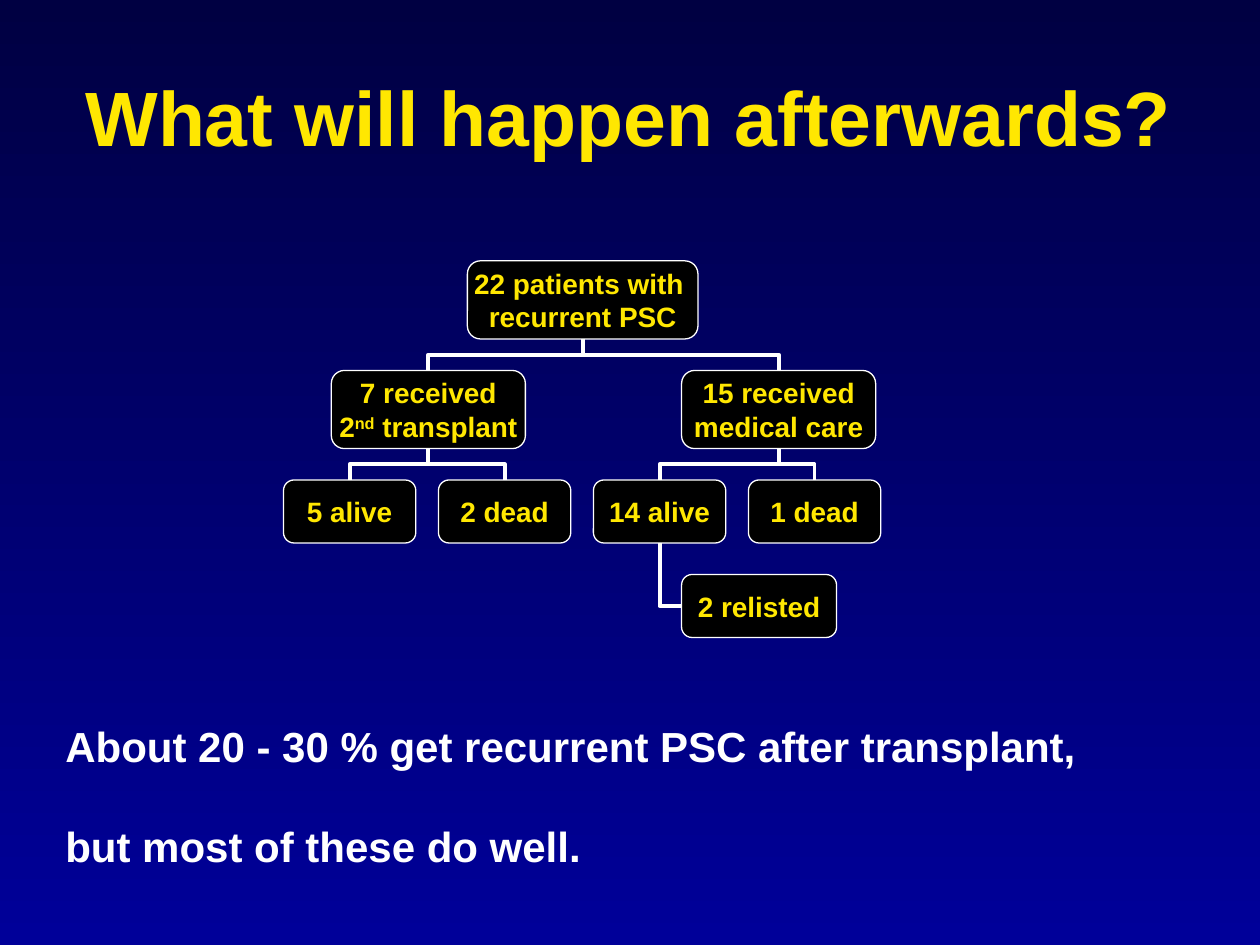
from pptx import Presentation
from pptx.dml.color import RGBColor
from pptx.enum.shapes import MSO_CONNECTOR, MSO_SHAPE
from pptx.enum.text import MSO_ANCHOR, PP_ALIGN
from pptx.oxml.ns import qn
from pptx.util import Inches, Pt
from lxml import etree

ELBOW, ROUNDED = MSO_CONNECTOR.ELBOW, MSO_SHAPE.ROUNDED_RECTANGLE
MIDDLE, CENTER, LEFT = MSO_ANCHOR.MIDDLE, PP_ALIGN.CENTER, PP_ALIGN.LEFT
TOP_SITE, LEFT_SITE, BOTTOM_SITE = 0, 1, 2

COLORS = {"bg_top": "000042", "bg_bottom": "000099", "box": "000000",
          "yellow": "FFE701", "white": "FFFFFF"}

# Content: each line is a list of runs, a run in SUPER is superscript
TITLE = [["What will happen afterwards?"]]
SUMMARY = [["About 20 - 30 % get recurrent PSC after transplant,"],
           ["but most of these do well."]]
SUPER = {"nd"}

# Box sizes and row tops, in inches
SIZES = {"root": (1.83, 0.62), "care": (1.54, 0.62),
         "outcome": (1.05, 0.5), "relisted": (1.23, 0.5)}
TOPS = {"root": 2.07, "care": 2.94, "outcome": 3.81, "relisted": 4.56}
OUTCOME_X = [2.25 + 1.23 * i for i in range(4)]

# name: (level, left, lines)
BOXES = {
    "all": ("root", 3.71, [["22 patients with "], ["recurrent PSC"]]),
    "transplant": ("care", 2.63, [["7 received"], ["2", "nd", " transplant"]]),
    "medical": ("care", 5.41, [["15 received"], ["medical care"]]),
    "t_alive": ("outcome", OUTCOME_X[0], [["5 alive"]]),
    "t_dead": ("outcome", OUTCOME_X[1], [["2 dead"]]),
    "m_alive": ("outcome", OUTCOME_X[2], [["14 alive"]]),
    "m_dead": ("outcome", OUTCOME_X[3], [["1 dead"]]),
    "relisted": ("relisted", 5.41, [["2 relisted"]]),
}
BRANCHES = {"all": ["transplant", "medical"],
            "transplant": ["t_alive", "t_dead"],
            "medical": ["m_alive", "m_dead"]}


def rgb(name):
    return RGBColor.from_string(COLORS[name])


def write(tf, lines, size, color, align=LEFT, gap=0):
    for i, runs in enumerate(lines):
        p = tf.paragraphs[0] if i == 0 else tf.add_paragraph()
        p.alignment = align
        if i and gap:
            p.space_before = Pt(gap)
        for text in runs:
            r = p.add_run()
            r.text = text
            for key, value in {"name": "Arial", "size": Pt(size), "bold": True}.items():
                setattr(r.font, key, value)
            r.font.color.rgb = rgb(color)
            if text in SUPER:
                r.font._element.set("baseline", "30000")


def add_box(level, left, lines):
    width, height = SIZES[level]
    sp = s.shapes.add_shape(ROUNDED, Inches(left), Inches(TOPS[level]),
                            Inches(width), Inches(height))
    sp.shadow.inherit = False
    sp.fill.solid()
    sp.fill.fore_color.rgb = rgb("box")
    sp.line.color.rgb = rgb("white")
    sp.line.width = Pt(0.75)
    tf = sp.text_frame
    margins = {f"margin_{side}": Inches(0.01) for side in ("left", "right", "top", "bottom")}
    for key, value in {"word_wrap": False, "vertical_anchor": MIDDLE, **margins}.items():
        setattr(tf, key, value)
    write(tf, lines, 16, "yellow", CENTER)
    return sp


def add_elbow(start, start_site, end, end_site):
    cxn = s.shapes.add_connector(ELBOW, 0, 0, 0, 0)
    cxn.begin_connect(start, start_site)
    cxn.end_connect(end, end_site)
    cxn.line.color.rgb = rgb("white")
    cxn.line.width = Pt(2.25)
    etree.SubElement(cxn._element.spPr, qn("a:effectLst"))
    return cxn


def turn(cxn, degrees, flip=False):
    xfrm = cxn._element.spPr.find(qn("a:xfrm"))
    for key in ("flipH", "flipV"):
        xfrm.attrib.pop(key, None)
    xfrm.set("rot", str(degrees * 60000))
    if flip:
        xfrm.set("flipH", "1")


def add_branch(parent, child):
    cxn = add_elbow(parent, BOTTOM_SITE, child, TOP_SITE)
    to_right = cxn.end_x > cxn.begin_x
    mid_x, mid_y = cxn.left + cxn.width // 2, cxn.top + cxn.height // 2
    # A quarter turn swaps width and height around the same centre
    cxn.width, cxn.height = cxn.height, cxn.width
    cxn.left, cxn.top = mid_x - cxn.width // 2, mid_y - cxn.height // 2
    turn(cxn, 270 if to_right else 90, flip=to_right)


def add_text(at, lines, size, color, wrap, gap=0):
    tf = s.shapes.add_textbox(*map(Inches, at)).text_frame
    tf.word_wrap = wrap
    write(tf, lines, size, color, gap=gap)


prs = Presentation()
prs.slide_width, prs.slide_height = Inches(10), Inches(7.5)
s = prs.slides.add_slide(prs.slide_layouts[6])

# Background gradient, top to bottom
bg = s.background.fill
bg.gradient()
bg.gradient_angle = 270
for stop, position, color in zip(bg.gradient_stops, (0, 1), ("bg_top", "bg_bottom")):
    stop.position = position
    stop.color.rgb = rgb(color)

# Patient tree
boxes = {name: add_box(*box) for name, box in BOXES.items()}
for parent, children in BRANCHES.items():
    for child in children:
        add_branch(boxes[parent], boxes[child])

# Side branch with a single bend
side = add_elbow(boxes["relisted"], LEFT_SITE, boxes["m_alive"], BOTTOM_SITE)
side._element.spPr.find(qn("a:prstGeom")).set("prst", "bentConnector2")
turn(side, 180)

# Title and summary
add_text((0.58, 0.5, 9.17, 0.83), TITLE, 44, "yellow", True)
add_text((0.42, 5.67, 8.22, 1.3), SUMMARY, 24, "white", False, gap=28.5)

prs.save("out.pptx")
